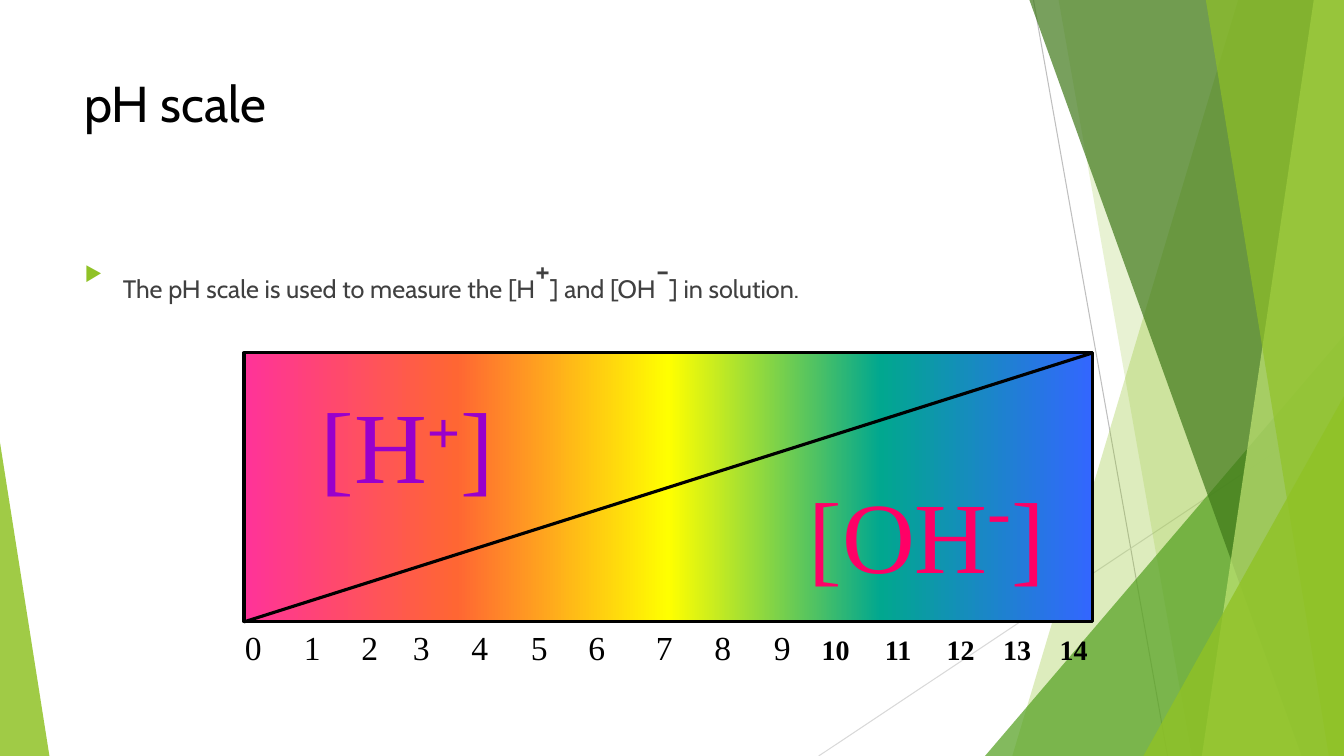
from lxml import etree
from pptx import Presentation
from pptx.dml.color import RGBColor
from pptx.enum.shapes import MSO_CONNECTOR, MSO_SHAPE
from pptx.enum.text import MSO_ANCHOR, PP_ALIGN
from pptx.oxml.ns import qn
from pptx.util import Inches, Pt

RECT, TRIANGLE = MSO_SHAPE.RECTANGLE, MSO_SHAPE.ISOSCELES_TRIANGLE
STRAIGHT = MSO_CONNECTOR.STRAIGHT
TOP, LEFT = MSO_ANCHOR.TOP, PP_ALIGN.LEFT
W, H = 13.33, 7.5
SANS, SERIF = "Cabin", "Times New Roman"
GREEN, GREY, BLACK = "90C226", "404040", "000000"

TITLE = "pH scale"
SENTENCE = [("The pH scale is used to measure the [H", 18, 0), ("+", 40, 30),
            ("] and [OH", 18, 0), ("-", 40, 30), ("] in solution.", 18, 0)]
IONS = [
    ((3.08, 3.75, 1.99, 1.31), "9900CC",
     [("[H", 72, 0), ("+", 72, 30, True), ("]", 72, 0)]),
    ((7.92, 4.42, 2.59, 1.3), "FF0066",
     [("[OH", 72, 0), ("-", 88, 30), ("]", 72, 0)]),
]
SCALE_BOX = (2.42, 3.5, 8.42, 2.67)
RAINBOW = ["FF3399", "FF6633", "FFFF00", "01A78F", "3366FF"]
NUMBERS_BOX = (2.33, 6.17, 8.57, 0.5)
NUMBER_CENTRES = [3.1, 3.67, 4.18, 4.76, 5.35, 5.92, 6.59, 7.17, 7.76,
                  8.29, 8.91, 9.53, 10.09, 10.65]
THIN_LINES = [((10.25, 0), (11.58, H), "BFBFBF"),
              ((W, 4.03), (8.12, H), "D9D9D9")]
FACETS = [
    ("band", 12.28, 10.04, GREEN, 30),
    ("band", 10.5, 11.82, GREEN, 20),
    ("triangle", (9.77, 3.33, 3.56, 4.17), 1, "54A021", 72),
    ("band", 10.21, 12.91, "3F7819", 70),
    ("band", 13.03, 11.92, "C0E474", 70),
    ("band", 11.96, 13.18, GREEN, 65),
    ("triangle", (11.34, 3.93, 1.99, 3.57), 1, GREEN, 80),
    ("triangle", (0, 4.39, 0.49, 3.11), 0, GREEN, 85),
]

prs = Presentation()
prs.slide_width, prs.slide_height = Inches(W), Inches(H)
s = prs.slides.add_slide(prs.slide_layouts[5])


def rgb(color):
    return RGBColor.from_string(color)


def inches(values):
    return [Inches(v) for v in values]


def add(parent, tag, **attrs):
    return etree.SubElement(parent, qn(tag), attrs)


def paint(sp, color, alpha):
    sp.shadow.inherit = False
    sp.fill.solid()
    sp.fill.fore_color.rgb = rgb(color)
    sp.line.fill.background()
    clr = sp.fill._xPr.find(qn("a:solidFill"))[0]
    add(clr, "a:alpha", val=str(alpha * 1000))


def line(start, end, color, width):
    sp = s.shapes.add_connector(STRAIGHT, *inches(start + end))
    sp.line.color.rgb = rgb(color)
    sp.line.width = Pt(width)
    add(sp._element.spPr, "a:effectLst")


def add_run(p, text, font, color, size, base=0, bold=False):
    r = p.add_run()
    r.text = text
    r.font.name, r.font.size, r.font.bold = font, Pt(size), bold
    r.font.color.rgb = rgb(color)
    if base:
        r.font._element.set("baseline", str(base * 1000))


def text_box(box, wrap=True):
    tf = s.shapes.add_textbox(*inches(box)).text_frame
    tf.word_wrap = wrap
    return tf


def band(top_x, bottom_x):
    points = [(W, 0), (W, H), (bottom_x, H)]
    fb = s.shapes.build_freeform(Inches(top_x), 0, scale=1.0)
    fb.add_line_segments([inches(pt) for pt in points], close=True)
    return fb.convert_to_shape()


def triangle(box, apex):
    sp = s.shapes.add_shape(TRIANGLE, *inches(box))
    sp.adjustments[0] = apex
    return sp


def draw_background():
    for start, end, color in THIN_LINES:
        line(start, end, color, 0.75)
    for kind, a, b, color, alpha in FACETS:
        sp = band(a, b) if kind == "band" else triangle(a, b)
        paint(sp, color, alpha)


def draw_text():
    title = s.shapes.title
    title.left, title.top, title.width, title.height = inches((0.74, 0.67, 9.4, 1.44))
    tf = title.text_frame
    tf.vertical_anchor = TOP
    p = tf.paragraphs[0]
    p.alignment = LEFT
    add_run(p, TITLE, SANS, BLACK, 36)

    p = text_box((0.74, 2.36, 9.4, 4.24)).paragraphs[0]
    pPr = p._p.get_or_add_pPr()
    pPr.set("marL", str(Inches(0.38)))
    pPr.set("indent", str(-Inches(0.38)))
    add(add(pPr, "a:buClr"), "a:srgbClr", val=GREEN)
    add(pPr, "a:buSzPct", val="80000")
    add(pPr, "a:buChar", char="▶")
    for part in SENTENCE:
        add_run(p, part[0], SANS, GREY, *part[1:])


def draw_scale():
    left, top, width, height = SCALE_BOX
    sp = s.shapes.add_shape(RECT, *inches(SCALE_BOX))
    sp.shadow.inherit = False
    sp.fill.gradient()
    sp.fill.gradient_angle = 0
    stops = sp.fill._xPr.find(qn("a:gradFill")).find(qn("a:gsLst"))
    for stop in list(stops):
        stops.remove(stop)
    for i, color in enumerate(RAINBOW):
        pos = i * 100000 // (len(RAINBOW) - 1)
        add(add(stops, "a:gs", pos=str(pos)), "a:srgbClr", val=color)
    sp.line.color.rgb = rgb(BLACK)
    sp.line.width = Pt(2.25)
    line((left, top + height), (left + width, top), BLACK, 2.25)

    for box, color, parts in IONS:
        p = text_box(box, False).paragraphs[0]
        for part in parts:
            add_run(p, part[0], SERIF, color, *part[1:])

    tf = text_box(NUMBERS_BOX)
    tf.margin_right = 0
    p = tf.paragraphs[0]
    tabs = add(p._p.get_or_add_pPr(), "a:tabLst")
    for x in NUMBER_CENTRES:
        offset = Inches(x - NUMBERS_BOX[0] - 0.1)
        add(tabs, "a:tab", pos=str(offset), algn="ctr")
    singles = "\t".join(str(n) for n in range(10))
    doubles = "".join(f"\t{n}" for n in range(10, 15))
    add_run(p, singles, SERIF, BLACK, 24)
    add_run(p, doubles, SERIF, BLACK, 20, bold=True)


draw_background()
draw_text()
draw_scale()
prs.save("out.pptx")
